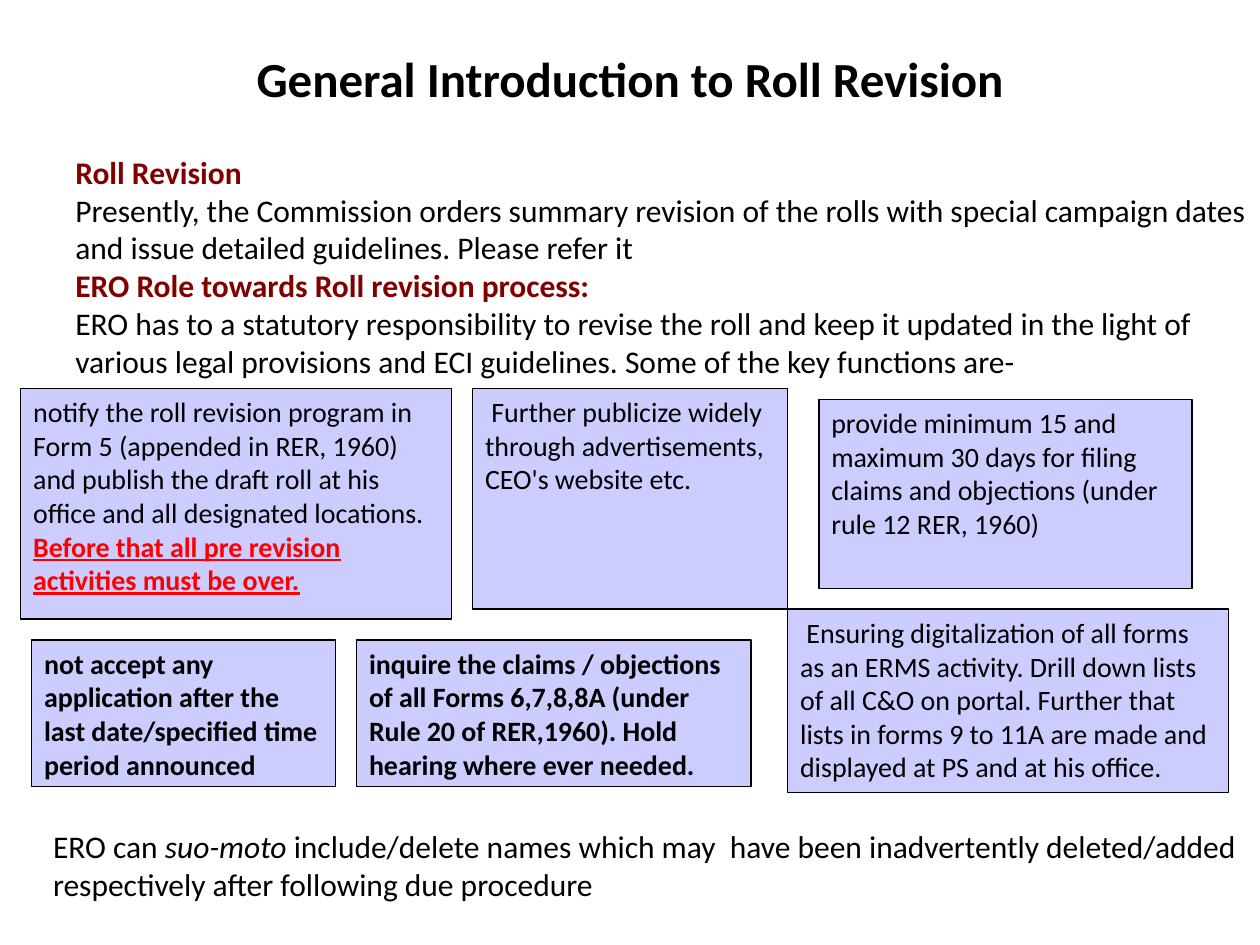
import pptx
import pptx.util
import pptx.dml.color
import pptx.enum.shapes
import pptx.enum.text

Cm = pptx.util.Cm
Pt = pptx.util.Pt
RGBColor = pptx.dml.color.RGBColor
Align = pptx.enum.text.PP_ALIGN
Anchor = pptx.enum.text.MSO_ANCHOR
BLACK = RGBColor(0x00, 0x00, 0x00)
RED = RGBColor(0xFF, 0x00, 0x00)
MAROON = RGBColor(0x80, 0x00, 0x00)
LILAC = RGBColor(0xCC, 0xCC, 0xFF)
BOLD = {"bold": True}
HEAD = {"bold": True, "color": MAROON}
ALERT = {"bold": True, "underline": True, "color": RED}

CARDS = [
    ((16.51, 8.05, 7.52, 3.81), [("provide minimum 15 and maximum 30 days for filing claims and objections (under rule 12 RER, 1960)", {})]),
    ((7.19, 12.9, 7.95, 2.95), [("inquire the claims / objections  of all Forms 6,7,8,8A (under Rule 20 of RER,1960). Hold hearing where ever needed.", BOLD)]),
    ((0.64, 12.9, 6.12, 2.95), [("not accept any application after the last date/specified time period announced", BOLD)]),
    ((9.53, 7.83, 6.35, 4.45), [(" Further publicize widely through advertisements, CEO's website etc.", {})]),
    ((0.42, 7.83, 8.68, 4.65), [
        ("notify the roll revision program in Form 5 (appended in RER, 1960) and publish the draft roll at his office and all designated locations. ", {}),
        ("Before that all pre revision activities must be over.", ALERT)]),
    ((15.88, 12.28, 8.89, 3.7), [(" Ensuring digitalization of all forms as an ERMS activity. Drill down lists of all C&O on portal. Further that lists in forms 9 to 11A are made and displayed at PS and at his office.", {})]),
]

INTRO = [
    [("Roll Revision", HEAD)],
    [("Presently, the Commission orders summary revision of the rolls with special campaign dates and issue detailed guidelines. Please refer it", {})],
    [("ERO Role towards Roll revision process:", HEAD)],
    [("ERO has to a statutory responsibility to revise the roll and keep it updated in the light of various legal provisions and ECI guidelines. Some of the key functions are-", {})],
]

CLOSE = [[
    ("ERO can ", {}),
    ("suo-moto", {"italic": True}),
    (" include/delete names which may  have been inadvertently deleted/added respectively after following due procedure", {}),
]]


class Page:
    """Holds the text style and the current slide, and adds elements to it."""

    def __init__(self, slide, face="Calibri"):
        self.slide = slide
        self.face = face

    def fill(self, frame, paras, size, anchor=Anchor.TOP, inset=(0.25, 0.13), **form):
        side, edge = (Cm(gap) for gap in inset)
        look = {"word_wrap": True, "vertical_anchor": anchor, "margin_left": side,
                "margin_right": side, "margin_top": edge, "margin_bottom": edge}
        for name, value in look.items():
            setattr(frame, name, value)
        for index, runs in enumerate(paras):
            para = frame.add_paragraph() if index else frame.paragraphs[0]
            for name, value in {"alignment": Align.LEFT, **form}.items():
                setattr(para, name, value)
            for text, style in runs:
                self.label(para, text, size, style)

    def label(self, para, text, size, style):
        run = para.add_run()
        run.text = text
        look = {"name": self.face, "size": Pt(size), "color": BLACK, **style}
        run.font.color.rgb = look.pop("color")
        for name, value in look.items():
            setattr(run.font, name, value)

    def text(self, area, paras, size, **form):
        box = self.slide.shapes.add_textbox(*map(Cm, area))
        self.fill(box.text_frame, paras, size, **form)

    def card(self, area, runs):
        kind = pptx.enum.shapes.MSO_SHAPE.RECTANGLE
        box = self.slide.shapes.add_shape(kind, *map(Cm, area))
        box.shadow.inherit = False
        box.fill.solid()
        box.fill.fore_color.rgb = LILAC
        box.line.color.rgb = BLACK
        box.line.width = Pt(0.75)
        self.fill(box.text_frame, [runs], 16)


def main():
    deck = pptx.Presentation()
    deck.slide_width, deck.slide_height = Cm(25.4), Cm(19.05)
    page = Page(deck.slides.add_slide(deck.slide_layouts[6]))
    for area, runs in CARDS:
        page.card(area, runs)
    page.text((1.27, 2.95, 24.13, 4.83), INTRO, 18)
    page.text((1.27, 0.36, 22.86, 2.41), [[("General Introduction to Roll Revision", BOLD)]], 28,
              anchor=Anchor.MIDDLE, alignment=Align.CENTER)
    page.text((1.07, 16.31, 24.03, 2.24), CLOSE, 18, anchor=Anchor.MIDDLE,
              inset=(0, 0), space_before=Pt(5))
    deck.save("out.pptx")


if __name__ == "__main__":
    main()
